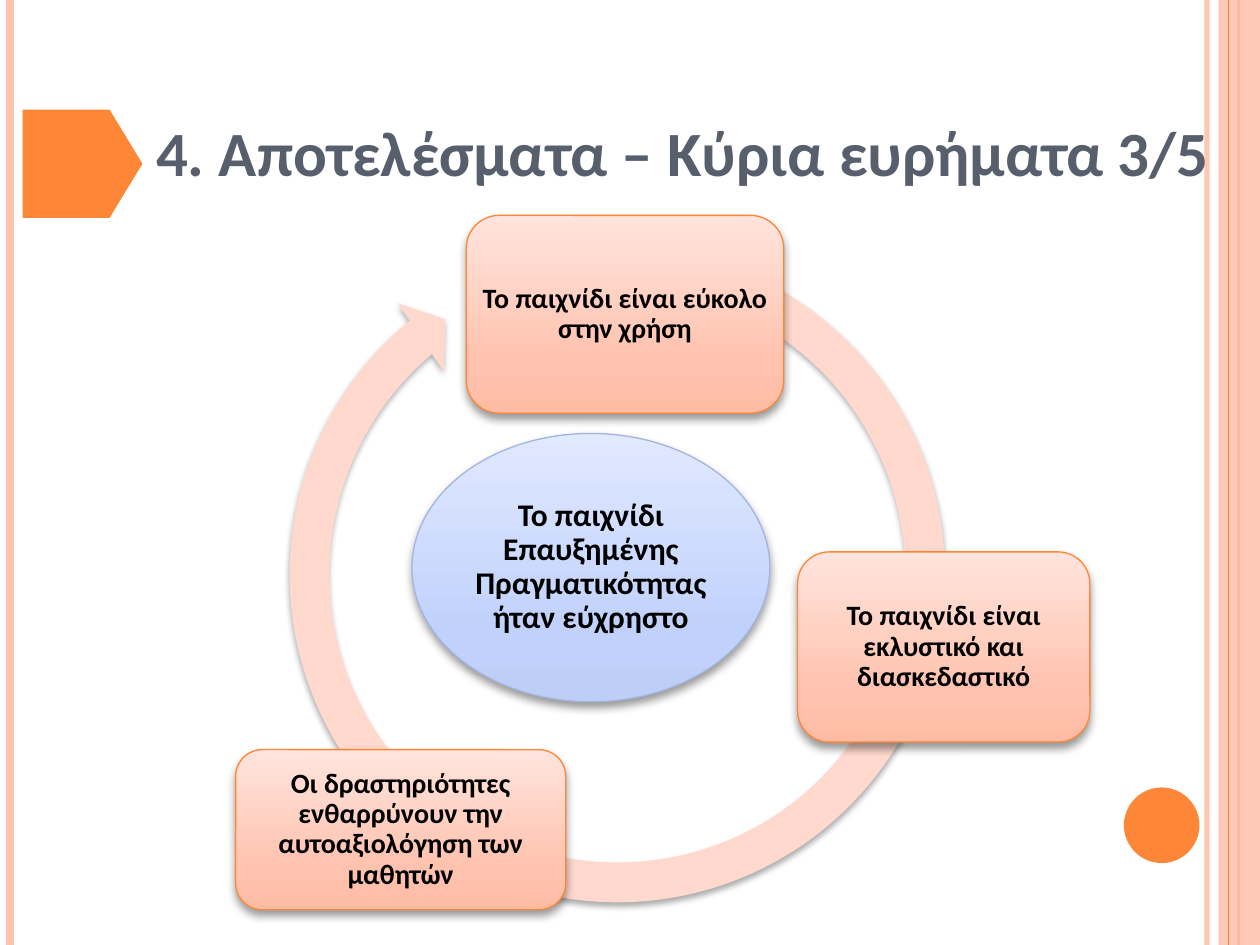
from copy import deepcopy

from lxml import etree
from pptx import Presentation
from pptx.dml.color import RGBColor
from pptx.enum.shapes import MSO_CONNECTOR, MSO_SHAPE
from pptx.enum.text import MSO_ANCHOR, PP_ALIGN
from pptx.oxml.ns import qn
from pptx.util import Inches, Pt

STRAIGHT = MSO_CONNECTOR.STRAIGHT
RECTANGLE, OVAL = MSO_SHAPE.RECTANGLE, MSO_SHAPE.OVAL
ROUNDED, CIRCULAR_ARROW = MSO_SHAPE.ROUNDED_RECTANGLE, MSO_SHAPE.CIRCULAR_ARROW
MIDDLE, BOTTOM, CENTER = MSO_ANCHOR.MIDDLE, MSO_ANCHOR.BOTTOM, PP_ALIGN.CENTER

WIDTH, HEIGHT = 10, 7.5
FONT = "Calibri"
ORANGE, PEACH, ARROW_PEACH = "FE8637", "FEC3AE", "FFD9CE"
TITLE_COLOR, BLACK = "575F6D", "000000"

TITLE = "4. Αποτελέσματα – Κύρια ευρήματα 3/5"
# x, colour, width in points, opacity in percent
EDGE_LINES = [(9.58, PEACH, 3, 93), (0.08, PEACH, 4.5, 100), (9.83, ORANGE, 1.5, 100)]
BAND_LINE = (9.75, ORANGE, 0.75, 100)
PENTAGON = [(0.18, 0.87), (0.87, 0.87), (1.13, 1.3), (0.87, 1.73), (0.18, 1.73)]
ARROW_ADJUSTMENTS = [0.057, 3.405, 138.212, 173.525, 0.059]

# Gradient colours from bottom to top, then the outline
ORANGE_STYLE = (["FFBCA5", "FFC2AE", "FFE4DD"], "FF8636")
BLUE_STYLE = (["BDCEF7", "C0D1FB", "E0E9FF"], "A4B6DF")
GRADIENT_POSITIONS = [0, 0.25, 1]

# Shape, place, style, text size, text
BUBBLES = [
    (ROUNDED, (3.7, 1.71, 2.52, 1.57), ORANGE_STYLE, 16,
     "Το παιχνίδι είναι εύκολο στην χρήση"),
    (ROUNDED, (6.33, 4.38, 2.32, 1.51), ORANGE_STYLE, 16,
     "Το παιχνίδι είναι εκλυστικό και διασκεδαστικό"),
    (ROUNDED, (1.87, 5.95, 2.62, 1.27), ORANGE_STYLE, 16,
     "Οι δραστηριότητες ενθαρρύνουν την αυτοαξιολόγηση των μαθητών"),
    (OVAL, (3.27, 3.44, 2.84, 2.13), BLUE_STYLE, 18,
     "Το παιχνίδι Επαυξημένης Πραγματικότητας ήταν εύχρηστο"),
]


def rgb(color):
    return RGBColor.from_string(color)


def set_opacity(color_parent, percent):
    color = color_parent.find(".//" + qn("a:srgbClr"))
    etree.SubElement(color, qn("a:alpha"), val=str(percent * 1000))


def add_shadow(effects, opacity, blur, distance):
    """Add a black shadow that falls straight down."""
    shadow = etree.SubElement(
        effects, qn("a:outerShdw"), blurRad=str(Pt(blur)), dist=str(Pt(distance)),
        dir="5400000", rotWithShape="0")
    etree.SubElement(shadow, qn("a:srgbClr"), val=BLACK)
    set_opacity(shadow, opacity)


def shape_shadow(shape, *settings):
    add_shadow(shape._element.spPr.find(qn("a:effectLst")), *settings)


def paint(shape, color):
    shape.shadow.inherit = False
    shape.fill.solid()
    shape.fill.fore_color.rgb = rgb(color)
    shape.line.fill.background()
    return shape


def add_shape(kind, place):
    return slide.shapes.add_shape(kind, *map(Inches, place))


def add_vertical_line(x, color, width, opacity):
    line = slide.shapes.add_connector(
        STRAIGHT, Inches(x), 0, Inches(x), Inches(HEIGHT))
    line.line.color.rgb = rgb(color)
    line.line.width = Pt(width)
    properties = line._element.spPr
    if opacity < 100:
        set_opacity(properties, opacity)
    etree.SubElement(properties, qn("a:effectLst"))


def write(shape, text, size, color, anchor):
    frame = shape.text_frame
    frame.word_wrap = True
    frame.vertical_anchor = anchor
    para = frame.paragraphs[0]
    para.text = text
    para.font.name, para.font.size, para.font.bold = FONT, Pt(size), True
    para.font.color.rgb = rgb(color)
    return frame, para


def add_bubble(kind, place, style, size, text):
    colors, outline = style
    bubble = add_shape(kind, place)
    bubble.shadow.inherit = False
    bubble.fill.gradient()
    bubble.fill.gradient_angle = 90
    stops = bubble._element.spPr.find(".//" + qn("a:gsLst"))
    stops.append(deepcopy(stops[0]))
    for stop, position, color in zip(bubble.fill.gradient_stops, GRADIENT_POSITIONS, colors):
        stop.position = position
        stop.color.rgb = rgb(color)
    bubble.line.color.rgb = rgb(outline)
    bubble.line.width = Pt(0.75)
    shape_shadow(bubble, 40, 5.2, 3)
    frame, para = write(bubble, text, size, BLACK, MIDDLE)
    frame.margin_left = frame.margin_right = frame.margin_top = frame.margin_bottom = 0
    para.alignment = CENTER
    para.line_spacing = 0.9


deck = Presentation()
deck.slide_width, deck.slide_height = Inches(WIDTH), Inches(HEIGHT)
slide = deck.slides.add_slide(deck.slide_layouts[6])

# Page frame
for edge in EDGE_LINES:
    add_vertical_line(*edge)
band = paint(add_shape(RECTANGLE, (9.67, 0, 0.33, HEIGHT)), PEACH)
set_opacity(band._element.spPr, 87)
add_vertical_line(*BAND_LINE)
paint(add_shape(OVAL, (8.92, 6.25, 0.6, 0.6)), ORANGE)

corners = [(Inches(x), Inches(y)) for x, y in PENTAGON]
outline = slide.shapes.build_freeform(*corners[0])
outline.add_line_segments(corners[1:], close=True)
paint(outline.convert_to_shape(), ORANGE)

# Cycle
cycle = paint(add_shape(CIRCULAR_ARROW, (2.13, 1.79, 5.54, 5.54)), ARROW_PEACH)
for index, value in enumerate(ARROW_ADJUSTMENTS):
    cycle.adjustments[index] = value
shape_shadow(cycle, 32, 3.5, 2.2)
for bubble in BUBBLES:
    add_bubble(*bubble)

# Title
title = slide.shapes.add_textbox(*map(Inches, (1.14, 0.3, 8.86, 1.25)))
_, heading = write(title, TITLE, 36, TITLE_COLOR, BOTTOM)
title_effects = etree.SubElement(
    heading.runs[0]._r.get_or_add_rPr(), qn("a:effectLst"))
add_shadow(title_effects, 40, 4, 3)

deck.save("out.pptx")
